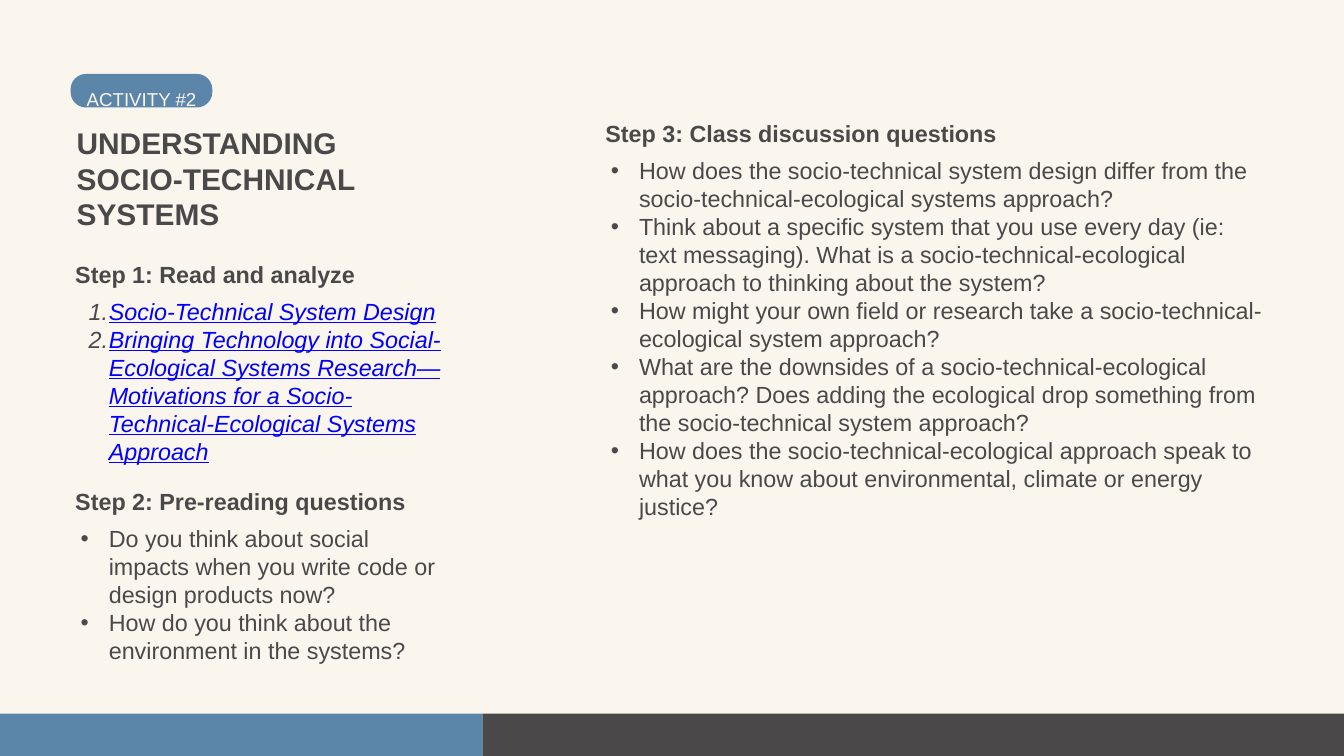
from dataclasses import dataclass
from enum import Enum

from lxml.etree import SubElement
from pptx import Presentation
from pptx.dml.color import RGBColor
from pptx.enum.shapes import MSO_SHAPE as Preset
from pptx.oxml.ns import qn
from pptx.util import Inches, Pt

FONT = "Arial"
CREAM, DARK, BLUE, LINK = "FAF6EE", "4A4849", "5B85A9", "0000FF"
BODY_SIZE = 25
LEADING = 1.2
LIST_DROP = 0.55
BAR_TOP, BAR_HEIGHT, BAR_SPLIT = 10.62, 0.63, 7.18


class Marker(Enum):
    BULLET = ("buChar", "char", "•", 0.42)
    NUMBER = ("buAutoNum", "type", "arabicPeriod", 0.3)


@dataclass
class Box:
    left: float
    top: float
    width: float
    height: float

    def lengths(self):
        return [Inches(n) for n in (self.left, self.top, self.width, self.height)]


@dataclass
class Style:
    size: float
    color: str = DARK
    bold: bool = False
    italic: bool = False
    underline: bool = False
    spacing: float | None = None


@dataclass
class Step:
    heading: str
    items: list[str]
    box: Box
    list_height: float
    style: Style
    marker: Marker = Marker.BULLET


HEADING = Style(BODY_SIZE, bold=True)
BODY = Style(BODY_SIZE)
READING = Style(BODY_SIZE, LINK, italic=True, underline=True)

STEPS = [
    Step("Step 1: Read and analyze", [
        "Socio-Technical System Design",
        "Bringing Technology into Social-Ecological Systems Research—Motivations "
        "for a Socio-Technical-Ecological Systems Approach",
    ], Box(1.12, 3.87, 5.66, 0.42), 2.53, READING, Marker.NUMBER),
    Step("Step 2: Pre-reading questions", [
        "Do you think about social impacts when you write code or design products now?",
        "How do you think about the environment in the systems?",
    ], Box(1.12, 7.25, 5.66, 0.42), 2.11, BODY),
    Step("Step 3: Class discussion questions", [
        "How does the socio-technical system design differ from the "
        "socio-technical-ecological systems approach?",
        "Think about a specific system that you use every day (ie: text messaging). "
        "What is a socio-technical-ecological approach to thinking about the system?",
        "How might your own field or research take a socio-technical-ecological "
        "system approach?",
        "What are the downsides of a socio-technical-ecological approach? Does adding "
        "the ecological drop something from the socio-technical system approach?",
        "How does the socio-technical-ecological approach speak to what you know about "
        "environmental, climate or energy justice?",
    ], Box(9.01, 1.78, 9.77, 0.42), 5.47, BODY),
]


def paint(fill, color: str) -> None:
    fill.solid()
    fill.fore_color.rgb = RGBColor.from_string(color)


def add_block(slide, preset: Preset, box: Box, color: str):
    shape = slide.shapes.add_shape(preset, *box.lengths())
    shape.shadow.inherit = False
    paint(shape.fill, color)
    shape.line.fill.background()
    return shape


def add_marker(paragraph, marker: Marker) -> None:
    tag, attribute, value, hanging = marker.value
    paragraph.level = 1
    properties = paragraph._p.get_or_add_pPr()
    properties.set("marL", str(Inches(0.5)))
    properties.set("indent", str(-Inches(hanging)))
    color = SubElement(properties, qn("a:buClr"))
    SubElement(color, qn("a:srgbClr"), val=DARK)
    SubElement(properties, qn("a:buFont"), typeface=FONT)
    SubElement(properties, qn(f"a:{tag}"), {attribute: value})


def add_text(slide, box: Box, lines: list[str], style: Style,
             marker: Marker | None = None) -> None:
    text_frame = slide.shapes.add_textbox(*box.lengths()).text_frame
    text_frame.word_wrap = True
    text_frame.margin_left = text_frame.margin_right = 0
    text_frame.margin_top = text_frame.margin_bottom = 0
    text_frame.text = "\n".join(lines)
    for paragraph in text_frame.paragraphs:
        paragraph.line_spacing = style.spacing or Pt(style.size * LEADING)
        if marker:
            add_marker(paragraph, marker)
        for run in paragraph.runs:
            font = run.font
            font.name, font.size = FONT, Pt(style.size)
            font.bold, font.italic = style.bold, style.italic
            font.underline = style.underline
            paint(font.fill, style.color)


def add_step(slide, step: Step) -> None:
    box = step.box
    list_box = Box(box.left, box.top + LIST_DROP, box.width, step.list_height)
    add_text(slide, list_box, step.items, step.style, step.marker)
    add_text(slide, box, [step.heading], HEADING)


def main() -> None:
    presentation = Presentation()
    presentation.slide_width = Inches(20)
    presentation.slide_height = Inches(11.25)
    slide = presentation.slides.add_slide(presentation.slide_layouts[6])
    paint(slide.background.fill, CREAM)

    add_block(slide, Preset.RECTANGLE, Box(BAR_SPLIT, BAR_TOP, 20 - BAR_SPLIT, BAR_HEIGHT), DARK)
    add_block(slide, Preset.RECTANGLE, Box(0, BAR_TOP, BAR_SPLIT, BAR_HEIGHT), BLUE)
    add_text(slide, Box(1.14, 1.85, 4.65, 1.62),
             ["UNDERSTANDING SOCIO-TECHNICAL SYSTEMS"], Style(32, bold=True))
    for step in STEPS:
        add_step(slide, step)

    badge = add_block(slide, Preset.ROUNDED_RECTANGLE, Box(1.05, 1.1, 2.11, 0.5), BLUE)
    badge.adjustments[0] = 0.46
    add_text(slide, Box(1.29, 1.18, 9.33, 0.34), ["ACTIVITY #2"], Style(20, CREAM, spacing=1.4))

    presentation.save("out.pptx")


if __name__ == "__main__":
    main()
